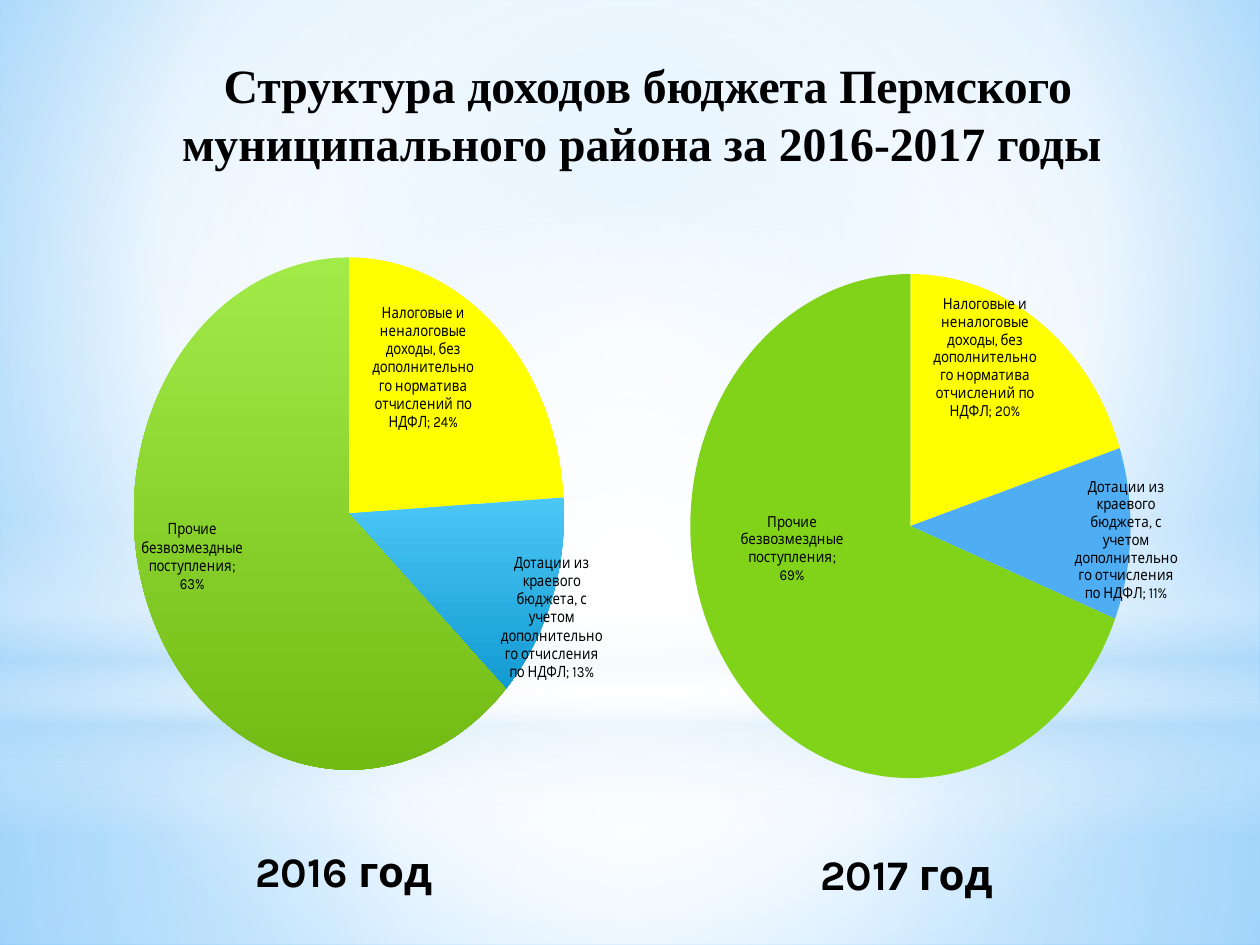
from lxml import etree
from pptx import Presentation
from pptx.chart.data import CategoryChartData
from pptx.dml.color import RGBColor
from pptx.enum.chart import XL_CHART_TYPE as ChartType
from pptx.enum.chart import XL_LABEL_POSITION as LabelPosition
from pptx.enum.shapes import MSO_SHAPE as Preset
from pptx.enum.text import MSO_ANCHOR as Anchor
from pptx.enum.text import MSO_AUTO_SIZE as AutoSize
from pptx.enum.text import PP_ALIGN as Align
from pptx.oxml import parse_xml
from pptx.oxml.ns import nsdecls, qn
from pptx.util import Pt

EMU_PER_PX = 914400 / 126

COLORS = {
    "black": "000000", "white": "FFFFFF",
    "sky": "9ED5FF", "edge": "5BB9FF", "mist": "B4DCFA",
    "tax": "FFFF00", "grant": "4FADF3", "other": "81D31A",
    "grant_top": "4BC7F5", "grant_low": "129BD2",
    "other_top": "A2EA48", "other_low": "72BB14",
}

SOURCES = [
    "Налоговые и неналоговые доходы, без дополнительного норматива отчислений по НДФЛ",
    "Дотации из краевого бюджета, с учетом дополнительного отчисления по НДФЛ",
    "Прочие безвозмездные поступления",
]


def px(*lengths):
    return [round(length * EMU_PER_PX) for length in lengths]


def rgb(name):
    return RGBColor.from_string(COLORS[name])


def set_gradient(fill, owner, stops, focus=None):
    """Fill with (position, colour, opacity) stops, radial when focus is given."""
    fill.gradient()
    gradient = next(owner.iter(qn("a:gradFill")))
    for child in list(gradient):
        gradient.remove(child)
    stop_list = etree.SubElement(gradient, qn("a:gsLst"))
    for position, color, opacity in stops:
        stop = etree.SubElement(stop_list, qn("a:gs"), pos=str(position * 1000))
        tone = etree.SubElement(stop, qn("a:srgbClr"), val=COLORS[color])
        if opacity < 100:
            etree.SubElement(tone, qn("a:alpha"), val=str(opacity * 1000))
    if focus:
        circle = etree.SubElement(gradient, qn("a:path"), path="circle")
        sides = {side: str(value * 1000) for side, value in zip("ltrb", focus)}
        etree.SubElement(circle, qn("a:fillToRect"), **sides)
    else:
        etree.SubElement(gradient, qn("a:lin"), ang="5400000", scaled="0")


def add_glow(slide, preset, box, stops, focus=None):
    glow = slide.shapes.add_shape(preset, *px(*box))
    glow.shadow.inherit = False
    glow.line.fill.background()
    set_gradient(glow.fill, glow.element, stops, focus)


def add_text(slide, text, box, size, font, align=Align.LEFT,
             anchor=Anchor.TOP, wrap=True, grow=False):
    frame = slide.shapes.add_textbox(*px(*box)).text_frame
    frame.word_wrap = wrap
    frame.vertical_anchor = anchor
    frame.auto_size = AutoSize.SHAPE_TO_FIT_TEXT if grow else AutoSize.NONE
    paragraph = frame.paragraphs[0]
    paragraph.alignment = align
    run = paragraph.add_run()
    run.text = text
    run.font.size = Pt(size)
    run.font.name = font
    run.font.bold = True
    run.font.color.rgb = rgb("black")


def add_layout(parent, index, **values):
    """Place a manual chart layout at the given child index."""
    layout = parse_xml(f"<c:layout {nsdecls('c')}><c:manualLayout/></c:layout>")
    for tag, value in values.items():
        etree.SubElement(layout[0], qn(f"c:{tag}"), val=str(value))
    for old in parent.findall(qn("c:layout")):
        parent.remove(old)
    parent.insert(index, layout)


def show_category(labels):
    labels.find(qn("c:showCatName")).set("val", "1")
    separator = etree.Element(qn("c:separator"))
    separator.text = "; "
    labels.find(qn("c:showBubbleSize")).addnext(separator)


def style_label(point, offset):
    label = point.data_label
    label.font.size = Pt(9)
    label.position = LabelPosition.BEST_FIT
    point_label = next(item for item in label.font._element.iterancestors()
                       if item.tag == qn("c:dLbl"))
    show_category(point_label)
    number_format = etree.Element(qn("c:numFmt"), formatCode="0%", sourceLinked="0")
    point_label.find(qn("c:txPr")).addprevious(number_format)
    add_layout(point_label, 1, x=offset[0], y=offset[1])


def add_pie(slide, box, shares, fills, offsets):
    data = CategoryChartData(number_format="0%")
    data.categories = SOURCES
    data.add_series("Series 1", shares)
    chart = slide.shapes.add_chart(ChartType.PIE, *px(*box), data).chart
    chart.has_legend = False
    chart.has_title = False
    chart.font.size = Pt(18)
    chart.font.name = "Karla"
    chart.font.color.rgb = rgb("black")

    plot = chart.plots[0]
    plot.vary_by_categories = True
    plot_area = next(chart.element.iter(qn("c:plotArea")))
    add_layout(plot_area, 0, layoutTarget="inner", xMode="edge", yMode="edge",
               x=0.07, y=0.06, w=0.84, h=0.91)

    series = plot.series[0]
    labels = series.data_labels
    labels.show_value = True
    labels.show_category_name = True
    labels.number_format = "0%"
    labels.number_format_is_linked = False
    labels.position = LabelPosition.BEST_FIT
    labels.font.size = Pt(9)
    for index, (colors, offset) in enumerate(zip(fills, offsets)):
        point = series.points[index]
        fill = point.format.fill
        if len(colors) == 1:
            fill.solid()
            fill.fore_color.rgb = rgb(colors[0])
        else:
            fill.gradient()
            fill.gradient_angle = 270
            for stop, color, position in zip(fill.gradient_stops, colors, (0, 1)):
                stop.color.rgb = rgb(color)
                stop.position = position
        style_label(point, offset)


def add_backdrop(slide):
    center = (50, 50, 50, 50)
    set_gradient(slide.background.fill, slide.element,
                 [(0, "sky", 100), (60, "white", 100), (100, "edge", 100)],
                 (20, 10, 20, 60))
    add_glow(slide, Preset.RECTANGLE, (0, 703, 1260, 242),
             [(0, "white", 91), (37, "white", 76), (100, "mist", 79)], center)
    add_glow(slide, Preset.RECTANGLE, (0, 0, 1260, 703),
             [(0, "white", 89), (48, "white", 62), (100, "mist", 79)], center)
    add_glow(slide, Preset.RECTANGLE, (0, 519, 1260, 315),
             [(0, "white", 0), (29, "white", 30), (45, "mist", 40),
              (55, "white", 26), (65, "mist", 60), (100, "white", 0)])
    add_glow(slide, Preset.OVAL, (0, 221, 1260, 703),
             [(0, "white", 100), (56, "white", 0)], center)


def main():
    deck = Presentation()
    deck.slide_width, deck.slide_height = px(1260, 945)
    slide = deck.slides.add_slide(deck.slide_layouts[6])
    add_backdrop(slide)

    # Title
    add_text(slide, " Структура доходов бюджета Пермского муниципального района за 2016-2017 годы",
             (44, 36, 1196, 155), 27.3, "Times New Roman",
             align=Align.CENTER, anchor=Anchor.MIDDLE)

    # Income structure by year
    add_pie(slide, (44, 194, 615, 616), (0.24, 0.13, 0.63),
            [("tax",), ("grant_top", "grant_low"), ("other_top", "other_low")],
            [(-0.25, 0.18), (-0.11, -0.08), (0.19, -0.16)])
    add_pie(slide, (620, 192, 620, 630), (0.2, 0.11, 0.69),
            [("tax",), ("grant",), ("other",)],
            [(-0.21, 0.17), (-0.11, 0.01), (0.23, -0.26)])

    # Year captions
    for year, left, top in ((2016, 243, 839), (2017, 808, 842)):
        add_text(slide, f"{year} год", (left, top, 208, 63), 24, "Karla",
                 wrap=False, grow=True)

    deck.save("out.pptx")


if __name__ == "__main__":
    main()
